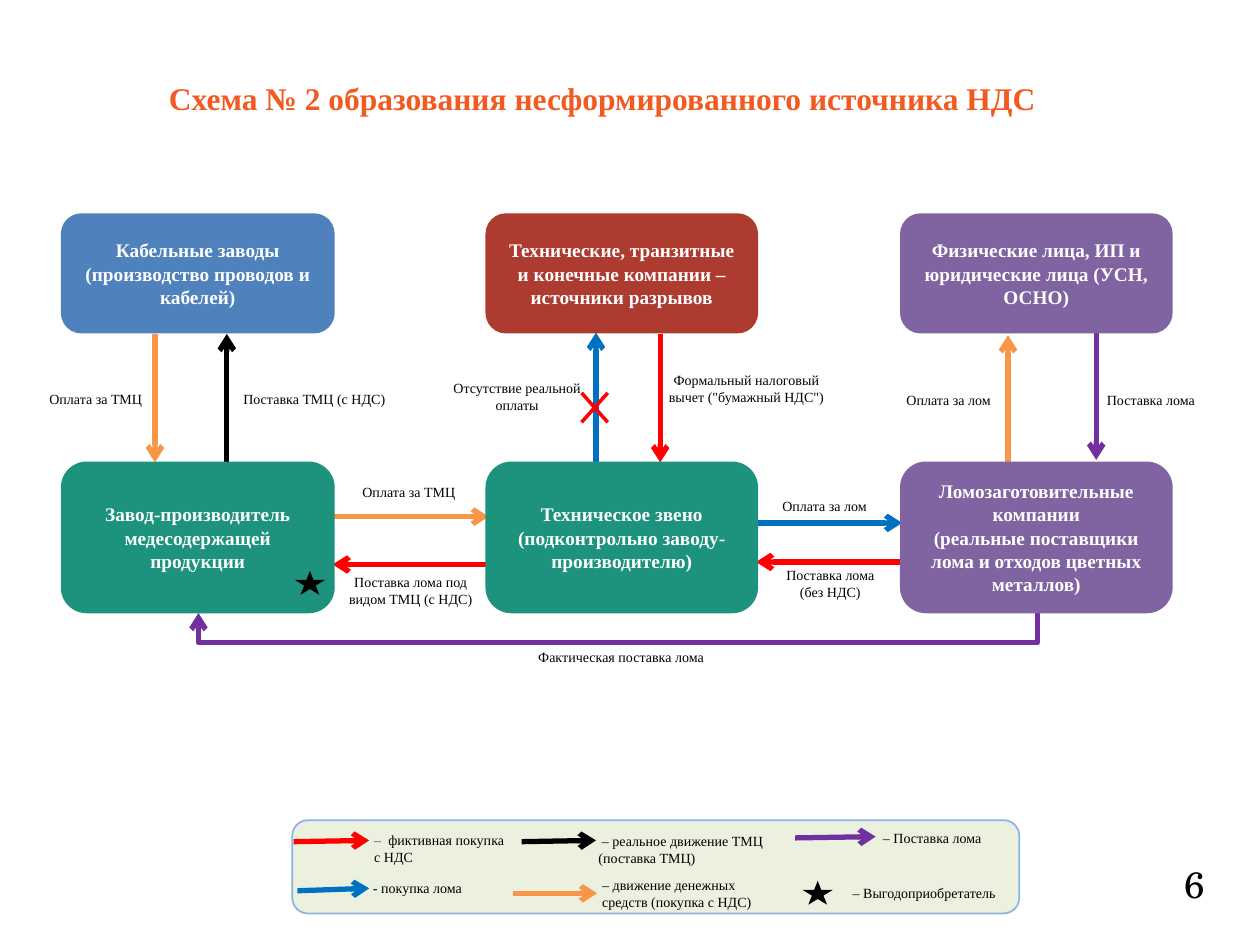
from lxml.etree import SubElement
from pptx import Presentation
from pptx.dml.color import RGBColor
from pptx.enum.shapes import MSO_CONNECTOR, MSO_SHAPE
from pptx.enum.text import MSO_ANCHOR, MSO_AUTO_SIZE, PP_ALIGN
from pptx.oxml.ns import qn
from pptx.util import Pt

PX = 9144  # 100 px to the inch
SERIF = "Times New Roman"
RED, BLUE, ORANGE, PURPLE, BLACK = "FF0000", "0070C0", "F79646", "7030A0", "000000"
GREEN, VIOLET, WHITE = "1D927D", "8064A2", "FFFFFF"

TITLE = "Схема № 2 образования несформированного источника НДС"

# Boxes: one list per row, one entry per column
COLUMNS = [(49, 216), (386, 215), (715, 215)]  # left, width
ROWS = [
    (170, 94, [
        (["Кабельные заводы (производство проводов и кабелей)"], "4F81BD"),
        (["Технические, транзитные и конечные компании – источники разрывов"], "AE3B2F"),
        (["Физические лица, ИП и юридические лица (УСН, ОСНО)"], VIOLET),
    ]),
    (367, 119, [
        (["Завод-производитель медесодержащей продукции"], GREEN),
        (["Техническое звено (подконтрольно заводу-производителю)"], GREEN),
        (["Ломозаготовительные компании",
          "(реальные поставщики лома и отходов цветных металлов)"], VIOLET),
    ]),
]

# Arrows: from x, from y, to x, to y, colour
FLOWS = [
    (123, 265, 123, 367, ORANGE), (180, 367, 180, 265, BLACK),
    (473, 371, 473, 264, BLUE), (524, 265, 524, 367, RED),
    (800, 370, 800, 266, ORANGE), (870, 263, 870, 365, PURPLE),
    (264, 410, 388, 410, ORANGE), (395, 448, 264, 448, RED),
    (592, 415, 716, 415, BLUE), (715, 446, 600, 446, RED),
]
LEGEND_ARROWS = [
    (233, 668, 293, 667, RED), (414, 668, 473, 667, BLACK), (631, 665, 695, 664, PURPLE),
    (236, 707, 293, 705, BLUE), (407, 709, 474, 709, ORANGE),
]

# Texts: left, top, width, height, text
FLOW_LABELS = [
    (30, 306, 92, 21, "Оплата за ТМЦ"),
    (184, 306, 131, 21, "Поставка ТМЦ (с НДС)"),
    (347, 297, 127, 35, "Отсутствие реальной оплаты"),
    (516, 291, 153, 35, 'Формальный налоговый вычет ("бумажный НДС")'),
    (708, 307, 90, 21, "Оплата за лом"),
    (856, 307, 115, 21, "Поставка лома"),
    (250, 380, 149, 21, "Оплата за ТМЦ"),
    (259, 451, 134, 35, "Поставка лома под видом ТМЦ (с НДС)"),
    (591, 391, 127, 21, "Оплата за лом"),
    (610, 446, 98, 35, "Поставка лома (без НДС)"),
    (417, 511, 152, 21, "Фактическая поставка лома"),
]
LEGEND_LABELS = [
    (288, 694, 92, 21, "- покупка лома"),
    (467, 657, 156, 35, " – реальное движение ТМЦ (поставка ТМЦ)"),
    (470, 692, 144, 35, "– движение денежных средств (покупка с НДС)"),
    (690, 654, 156, 21, " – Поставка лома"),
    (666, 698, 156, 21, " – Выгодоприобретатель"),
]
FICTITIOUS_LABEL = (289, 656, 128, 35)
FICTITIOUS_LINES = [[("–  ", PURPLE), ("фиктивная покупка", BLACK)], [("с НДС", BLACK)]]
STARS = [(234, 453), (637, 699)]  # left, top

presentation = Presentation()
presentation.slide_width, presentation.slide_height = 1000 * PX, 750 * PX
slide = presentation.slides.add_slide(presentation.slide_layouts[5])


def scaled(*lengths):
    return [length * PX for length in lengths]


def rgb(value):
    return RGBColor.from_string(value)


def set_values(target, values):
    for name, value in values.items():
        setattr(target, name, value)


def write(frame, lines, size, align=PP_ALIGN.CENTER, bold=False, font=SERIF,
          side=8, **frame_values):
    """Each line is a paragraph: a list of (text, colour) runs."""
    margins = dict(margin_left=side * PX, margin_right=side * PX,
                   margin_top=4 * PX, margin_bottom=4 * PX, word_wrap=True)
    set_values(frame, {**margins, **frame_values})
    for index, runs in enumerate(lines):
        paragraph = frame.add_paragraph() if index else frame.paragraphs[0]
        paragraph.alignment = align
        for text, color in runs:
            run = paragraph.add_run()
            run.text = text
            set_values(run.font, dict(size=Pt(size), bold=bold, name=font))
            run.font.color.rgb = rgb(color)


def add_label(area, lines, **format_values):
    box = slide.shapes.add_textbox(*scaled(*area))
    write(box.text_frame, lines, **{
        "size": 8, "auto_size": MSO_AUTO_SIZE.SHAPE_TO_FIT_TEXT, **format_values})


def add_block(kind, area, fill, line=None):
    shape = slide.shapes.add_shape(kind, *scaled(*area))
    shape.shadow.inherit = False
    shape.fill.solid()
    shape.fill.fore_color.rgb = rgb(fill)
    if line:
        shape.line.color.rgb = rgb(line)
        shape.line.width = Pt(1)
    else:
        shape.line.fill.background()
    return shape


def add_arrow(x1, y1, x2, y2, color, kind=MSO_CONNECTOR.STRAIGHT):
    connector = slide.shapes.add_connector(kind, *scaled(x1, y1, x2, y2))
    connector.line.color.rgb = rgb(color)
    connector.line.width = Pt(3)
    SubElement(connector.line._get_or_add_ln(), qn("a:tailEnd"), type="arrow")
    SubElement(connector._element.spPr, qn("a:effectLst"))
    return connector


# Title
title = slide.shapes.title
set_values(title, dict(zip(("left", "top", "width", "height"), scaled(125, 39, 822, 77))))
write(title.text_frame, [[(TITLE, "F15A21")]], 18, PP_ALIGN.LEFT, bold=True, side=9,
      word_wrap=False, auto_size=MSO_AUTO_SIZE.NONE, vertical_anchor=MSO_ANCHOR.MIDDLE)

# Flows between the boxes
for flow in FLOWS:
    add_arrow(*flow)

# Actual delivery: an elbow turned by 90 degrees that dips 25 px below the boxes
delivery = add_arrow(490, 153, 491, 819, PURPLE, MSO_CONNECTOR.ELBOW)
properties = delivery._element.spPr
properties.find(qn("a:xfrm")).set("rot", "5400000")
geometry = properties.find(qn("a:prstGeom"))
SubElement(geometry.find(qn("a:avLst")), qn("a:gd"), name="adj1", fmla="val 2500000")

# Boxes
for top, height, boxes in ROWS:
    for (left, width), (lines, color) in zip(COLUMNS, boxes):
        box = add_block(MSO_SHAPE.ROUNDED_RECTANGLE, (left, top, width, height), color, color)
        write(box.text_frame, [[(line, WHITE)] for line in lines], 11, bold=True,
              vertical_anchor=MSO_ANCHOR.MIDDLE)

# Legend
add_block(MSO_SHAPE.ROUNDED_RECTANGLE, (232, 651, 577, 74), "EBF1DE", "8EB4E3")
for arrow in LEGEND_ARROWS:
    add_arrow(*arrow)
add_label(FICTITIOUS_LABEL, FICTITIOUS_LINES, align=PP_ALIGN.LEFT)

# Labels of flows and legend
for labels, align in ((FLOW_LABELS, PP_ALIGN.CENTER), (LEGEND_LABELS, PP_ALIGN.LEFT)):
    for *area, text in labels:
        add_label(area, [[(text, BLACK)]], align=align)

# Beneficiary stars and the cross over the missing payment
for left, top in STARS:
    add_block(MSO_SHAPE.STAR_5_POINT, (left, top, 24, 19), BLACK)
cross = add_block(MSO_SHAPE.MATH_MULTIPLY, (452, 301, 40, 45), RED)
cross.adjustments[0] = 0.07

# Slide number
add_label((922, 680, 52, 43), [[("6", BLACK)]], size=21, font="TeX Gyre Schola")

presentation.save("out.pptx")
